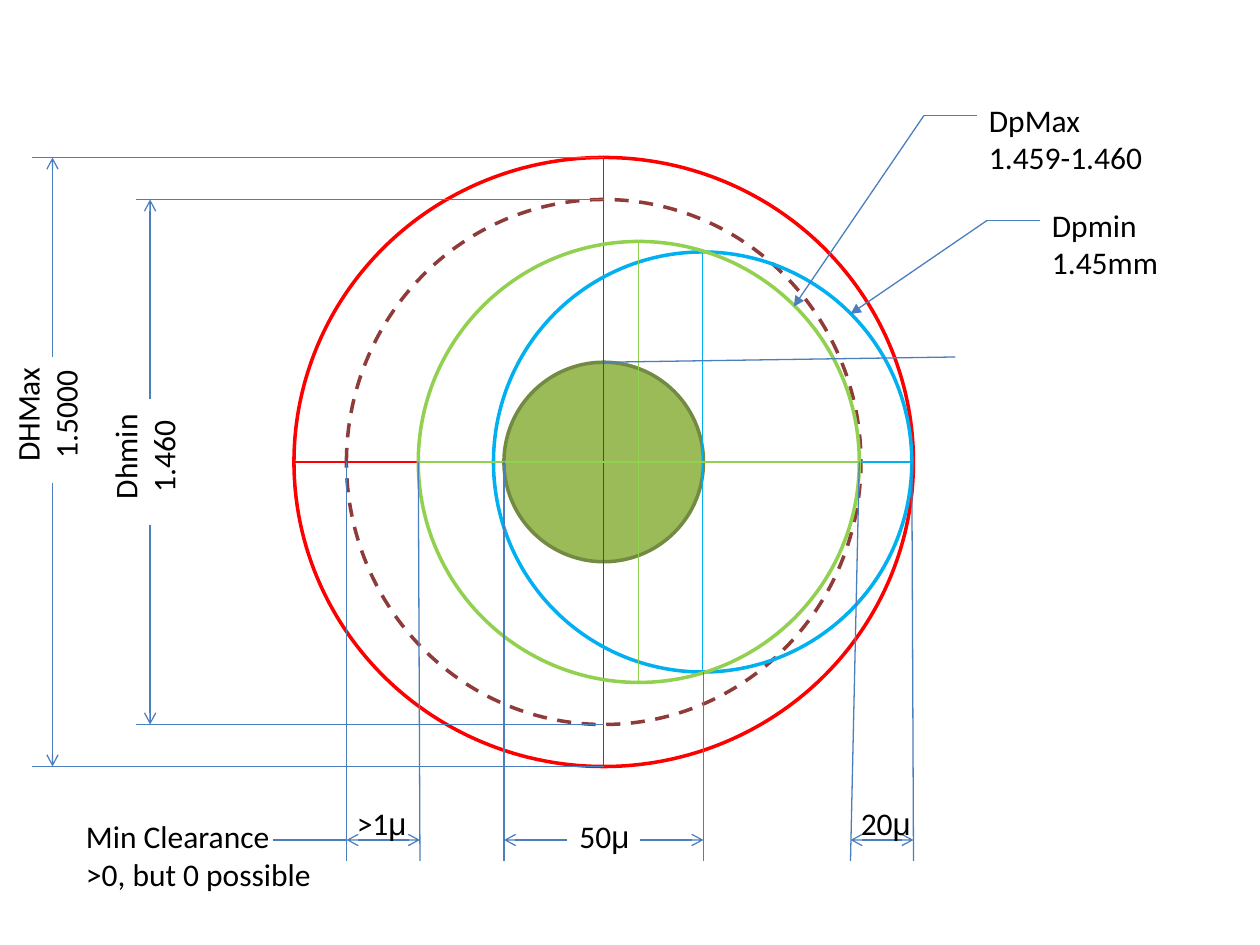
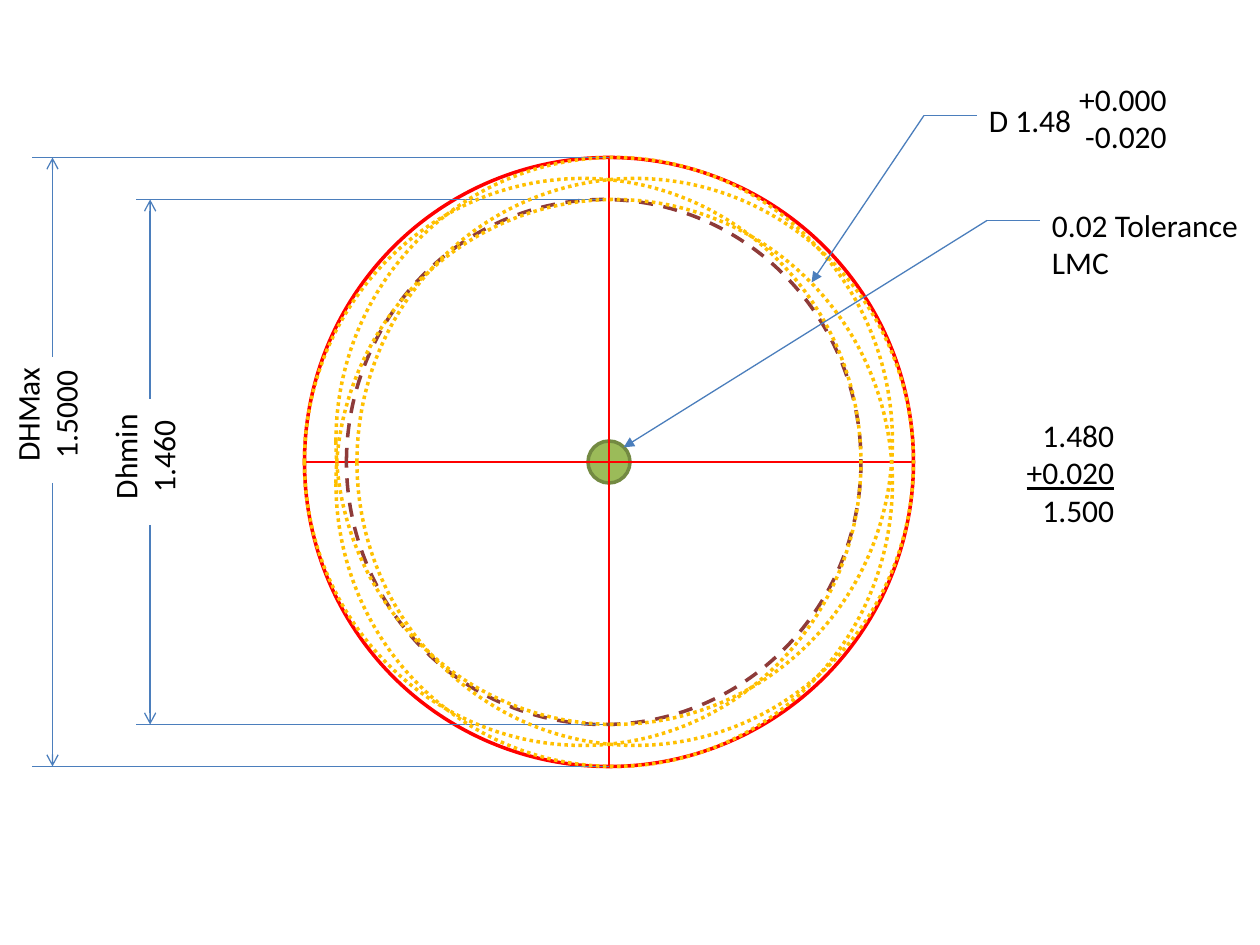
from dataclasses import dataclass

from lxml import etree
from pptx import Presentation
from pptx.dml.color import RGBColor
from pptx.enum.dml import MSO_LINE
from pptx.enum.shapes import MSO_CONNECTOR, MSO_SHAPE
from pptx.enum.text import MSO_AUTO_SIZE, PP_ALIGN
from pptx.oxml.ns import qn
from pptx.util import Inches, Pt

LEFT, CENTER, RIGHT = PP_ALIGN.LEFT, PP_ALIGN.CENTER, PP_ALIGN.RIGHT
DASH, DOT = MSO_LINE.DASH, MSO_LINE.ROUND_DOT
OVAL, STRAIGHT = MSO_SHAPE.OVAL, MSO_CONNECTOR.STRAIGHT
FIT_TEXT = MSO_AUTO_SIZE.SHAPE_TO_FIT_TEXT

COLORS = {
    "hole_max": "FF0000", "hole_min": "8E3B39", "pin_min": "00B0F0",
    "pin_max": "92D050", "shifted": "FFC000", "zone": "9BBB59",
    "zone_edge": "738A42", "dimension": "4B7EBC", "text": "000000",
}
WIDTH, HEIGHT = 10, 7.5
COLUMNS, ROWS = 120, 90
AXIS = 44           # row of the common horizontal centre line
HOLE_TOP, HOLE_BOTTOM = 15, 73
INNER_TOP, INNER_BOTTOM = 19, 69
DIMENSION_ROW, WITNESS_END = 80, 82
LINE_HEIGHT = 3.6   # rows per line of text
PADDING = 1.2       # top and bottom insets together


@dataclass
class Span:
    text: str
    font: str = "Calibri"
    underline: bool = False


MICRO = Span("μ", "Arial")


class Drawing:
    """Style of the tolerance sketches and the slide being drawn."""

    def __init__(self, deck):
        self.deck = deck
        self.page = None

    def new_page(self):
        self.page = self.deck.slides.add_slide(self.deck.slide_layouts[6])

    def across(self, columns):
        return Inches(WIDTH * columns / COLUMNS)

    def down(self, rows):
        return Inches(HEIGHT * rows / ROWS)

    def frame(self, left, top, width, height):
        return (self.across(left), self.down(top),
                self.across(width), self.down(height))

    def color(self, name):
        return RGBColor.from_string(COLORS[name])

    def circle(self, frame, edge, fill=None, dash=None, parent=None):
        shape = (parent or self.page).shapes.add_shape(OVAL, *self.frame(*frame))
        shape.shadow.inherit = False
        if fill:
            shape.fill.solid()
            shape.fill.fore_color.rgb = self.color(fill)
        else:
            shape.fill.background()
        shape.line.color.rgb = self.color(edge)
        shape.line.width = Pt(2)
        if dash:
            shape.line.dash_style = dash

    def line(self, start, end, color="dimension", head=None, tail=None, parent=None):
        connector = (parent or self.page).shapes.add_connector(
            STRAIGHT, self.across(start[0]), self.down(start[1]),
            self.across(end[0]), self.down(end[1]))
        connector.line.color.rgb = self.color(color)
        connector.line.width = Pt(0.75)
        outline = connector.line._ln
        for tag, kind in (("a:headEnd", head), ("a:tailEnd", tail)):
            if kind:
                etree.SubElement(outline, qn(tag), type=kind)
        etree.SubElement(connector._element.spPr, qn("a:effectLst"))

    def crossed_circle(self, frame, color):
        """Circle grouped with its two centre lines."""
        left, top, width, height = frame
        group = self.page.shapes.add_group_shape()
        middle_x, middle_y = left + width / 2, top + height / 2
        self.circle(frame, color, parent=group)
        self.line((middle_x, top), (middle_x, top + height), color, parent=group)
        self.line((left, middle_y), (left + width, middle_y), color, parent=group)

    def label(self, left, top, width, lines, align=LEFT, turn=0):
        """Text box; each line is a string or a list of spans."""
        height = len(lines) * LINE_HEIGHT + PADDING
        box = self.page.shapes.add_textbox(*self.frame(left, top, width, height))
        box.rotation = turn
        frame = box.text_frame
        frame.word_wrap = False
        frame.auto_size = FIT_TEXT
        for index, line in enumerate(lines):
            para = frame.add_paragraph() if index else frame.paragraphs[0]
            para.alignment = align
            for span in [Span(line)] if isinstance(line, str) else line:
                run = para.add_run()
                run.text = span.text
                run.font.name = span.font
                run.font.size = Pt(18)
                run.font.color.rgb = self.color("text")
                if span.underline:
                    run.font.underline = True

    def leader(self, target, elbow):
        self.line(target, elbow, head="triangle")
        self.line(elbow, (elbow[0] + 5, elbow[1]))

    def height_dimension(self, column, top, bottom, gap_middle, lines, width):
        """Vertical dimension whose gap holds a label turned upwards."""
        height = len(lines) * LINE_HEIGHT + PADDING
        self.label(column - 0.6 - width / 2, gap_middle - 0.5 - height / 2,
                   width, lines, CENTER, 270)
        self.line((column, gap_middle - 6), (column, top), tail="arrow")
        self.line((column, gap_middle + 6), (column, bottom), tail="arrow")

    def hole(self, left, width):
        """Largest and smallest hole with their height dimensions."""
        center = left + width / 2
        self.crossed_circle((left, HOLE_TOP, width, HOLE_BOTTOM - HOLE_TOP), "hole_max")
        self.circle((33, INNER_TOP, 49, INNER_BOTTOM - INNER_TOP), "hole_min", dash=DASH)
        for row in (HOLE_TOP, HOLE_BOTTOM):
            self.line((center, row), (3, row))
        for row in (INNER_TOP, INNER_BOTTOM):
            self.line((57.5, row), (13, row))
        self.height_dimension(14.3, INNER_TOP, INNER_BOTTOM, 44, ["Dhmin", "1.460"], 10.9)
        self.height_dimension(5, HOLE_TOP, HOLE_BOTTOM, 40, ["DHMax", "1.5000"], 11.5)


def draw_clearance(drawing):
    drawing.new_page()
    drawing.circle((48, 34.5, 19, 19), "zone_edge", "zone")
    drawing.hole(28, 59)
    drawing.crossed_circle((47, 24, 39.84, 40), "pin_min")
    drawing.crossed_circle((39.84, 23, 42, 42), "pin_max")

    witnesses = [(33, AXIS, 33), (39.84, AXIS, 40), (48, AXIS, 48),
                 (67, 64, 67), (81.84, AXIS, 81), (86.84, AXIS, 87)]
    for column, row, foot in witnesses:
        drawing.line((column, row), (foot, WITNESS_END))
    drawing.line((57.5, 34.5), (91, 34))

    drawing.leader((75.6, 29.2), (88, 11))
    drawing.leader((81, 29.9), (94, 21))
    drawing.label(93, 9, 17.2, ["DpMax", "1.459-1.460"])
    drawing.label(99, 19, 12.6, ["Dpmin", "1.45mm"])

    for left, right in ((33, 40), (81, 87)):
        drawing.line((right, DIMENSION_ROW), (left, DIMENSION_ROW),
                     head="arrow", tail="arrow")
    for inner, outer in ((54, 48), (61, 67)):
        drawing.line((inner, DIMENSION_ROW), (outer, DIMENSION_ROW), tail="arrow")
    drawing.line((33, DIMENSION_ROW), (26, DIMENSION_ROW))

    for left, top, value in ((32.8, 76, ">1"), (54, 77.2, "50"), (80.8, 76, "20")):
        drawing.label(left, top, 7.2, [[Span(value), MICRO]])
    drawing.label(7, 77.2, 24.1, ["Min Clearance", ">0, but 0 possible"])


def draw_position(drawing):
    drawing.new_page()
    drawing.circle((56, 42, 4, 4), "zone_edge", "zone")
    drawing.hole(29, 58)
    for left, top in ((29, 17), (32, 15), (34, 17), (32, 19)):
        drawing.circle((left, top, 53, 54), "shifted", dash=DOT)

    drawing.leader((77.3, 26.9), (88, 11))
    drawing.leader((59.4, 42.6), (94, 21))
    drawing.label(93, 9, 10.3, ["D 1.48"])
    drawing.label(101.5, 7, 10.8, ["+0.000", "-0.020"], RIGHT)
    drawing.label(99, 19, 20.3, ["0.02 Tolerance", "LMC"])
    drawing.label(96.5, 39, 10.8,
                  ["1.480", [Span("+0.020", underline=True)], "1.500"], RIGHT)


def main():
    deck = Presentation()
    deck.slide_width, deck.slide_height = Inches(WIDTH), Inches(HEIGHT)
    drawing = Drawing(deck)
    draw_clearance(drawing)
    draw_position(drawing)
    deck.save("out.pptx")


if __name__ == "__main__":
    main()
